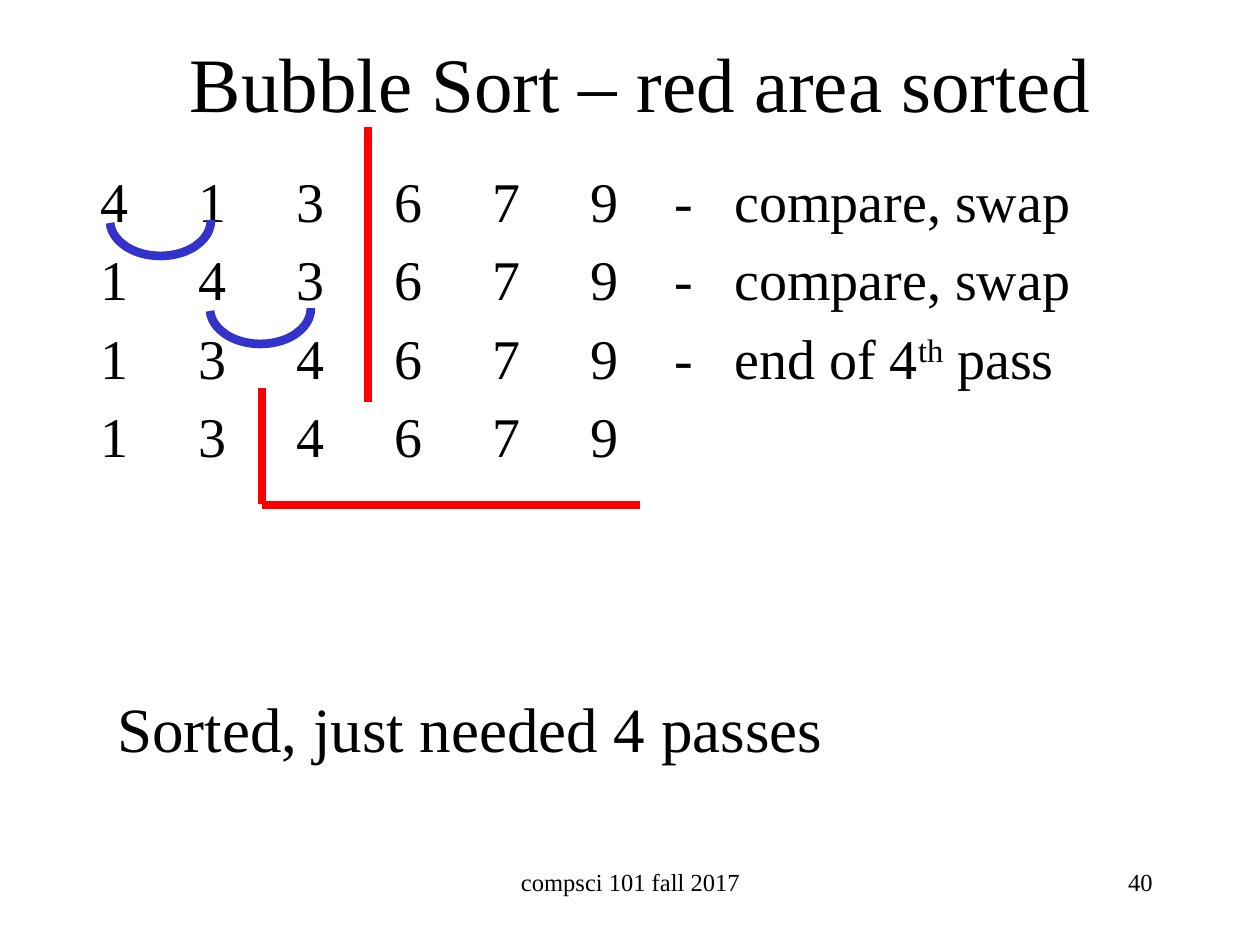
import pptx
import pptx.util
import pptx.dml.color
import pptx.enum.shapes
import pptx.enum.text
import pptx.oxml.ns
import lxml.etree

ALIGN = pptx.enum.text.PP_ALIGN
SHAPE = pptx.enum.shapes.MSO_SHAPE
STRAIGHT = pptx.enum.shapes.MSO_CONNECTOR.STRAIGHT
qn = pptx.oxml.ns.qn


def px(n):
    return pptx.util.Emu(round(n * 914400 / 126))


def rgb(color):
    return pptx.dml.color.RGBColor.from_string(color)


prs = pptx.Presentation()
prs.slide_width, prs.slide_height = px(1260), px(945)
s = prs.slides.add_slide(prs.slide_layouts[6])

rows = [
    ("413679", ["compare, swap"]),
    ("143679", ["compare, swap"]),
    ("134679", ["end of 4", "th", " pass"]),
    ("134679", []),
]
body = []
for digits, note in rows:
    lead = "\t".join(digits)
    if note:
        lead += "\t-\t" + note[0]
    body.append([lead] + note[1:])

texts = [
    (105, 3, 1071, 158, 44, ALIGN.CENTER, [["Bubble Sort – red area sorted"]]),
    (88, 160, 1134, 407, 32, ALIGN.LEFT, body),
    (431, 861, 399, 63, 14, ALIGN.CENTER, [["compsci 101 fall 2017"]]),
    (903, 861, 262, 63, 14, ALIGN.RIGHT, [["40"]]),
    (105, 683, 737, 89, 36, ALIGN.LEFT, [["Sorted, just needed 4 passes"]]),
]
for x, y, w, h, size, align, paragraphs in texts:
    sp = s.shapes.add_textbox(px(x), px(y), px(w), px(h))
    tf = sp.text_frame
    tf.word_wrap = True
    if size == 44:
        tf.vertical_anchor = pptx.enum.text.MSO_ANCHOR.MIDDLE
    for i, runs in enumerate(paragraphs):
        p = tf.add_paragraph() if i else tf.paragraphs[0]
        p.alignment = align
        if paragraphs is body:
            pPr = p._p.get_or_add_pPr()
            before = lxml.etree.SubElement(pPr, qn("a:spcBef"))
            lxml.etree.SubElement(before, qn("a:spcPct"), val="20000")
            tabs = lxml.etree.SubElement(pPr, qn("a:tabLst"))
            for stop in [98, 196, 294, 392, 490, 574, 634]:
                lxml.etree.SubElement(tabs, qn("a:tab"), pos=str(px(stop)), algn="l")
        for text in runs:
            r = p.add_run()
            r.text = text
            r.font.name = "Times New Roman"
            r.font.size = pptx.util.Pt(size)
            r.font.color.rgb = rgb("000000")
            if text == "th":
                r.font._element.set("baseline", "30000")

for x, y in [(110, 185), (210, 273)]:
    sp = s.shapes.add_shape(SHAPE.ARC, px(x), px(y), px(101), px(71))
    sp.adjustments[0] = 215.73
    sp.adjustments[1] = 106.31
    sp.shadow.inherit = False
    sp.fill.background()
    sp.line.color.rgb = rgb("3333CC")
    sp.line.width = pptx.util.Pt(5)

borders = [
    (640, 505, 262, 505),
    (368, 127, 368, 243),
    (368, 215, 368, 330),
    (368, 286, 368, 402),
    (262, 388, 262, 504),
]
for x1, y1, x2, y2 in borders:
    sp = s.shapes.add_connector(STRAIGHT, px(x1), px(y1), px(x2), px(y2))
    sp.line.color.rgb = rgb("FF0000")
    sp.line.width = pptx.util.Pt(5)
    lxml.etree.SubElement(sp._element.spPr, qn("a:effectLst"))

prs.save("out.pptx")
